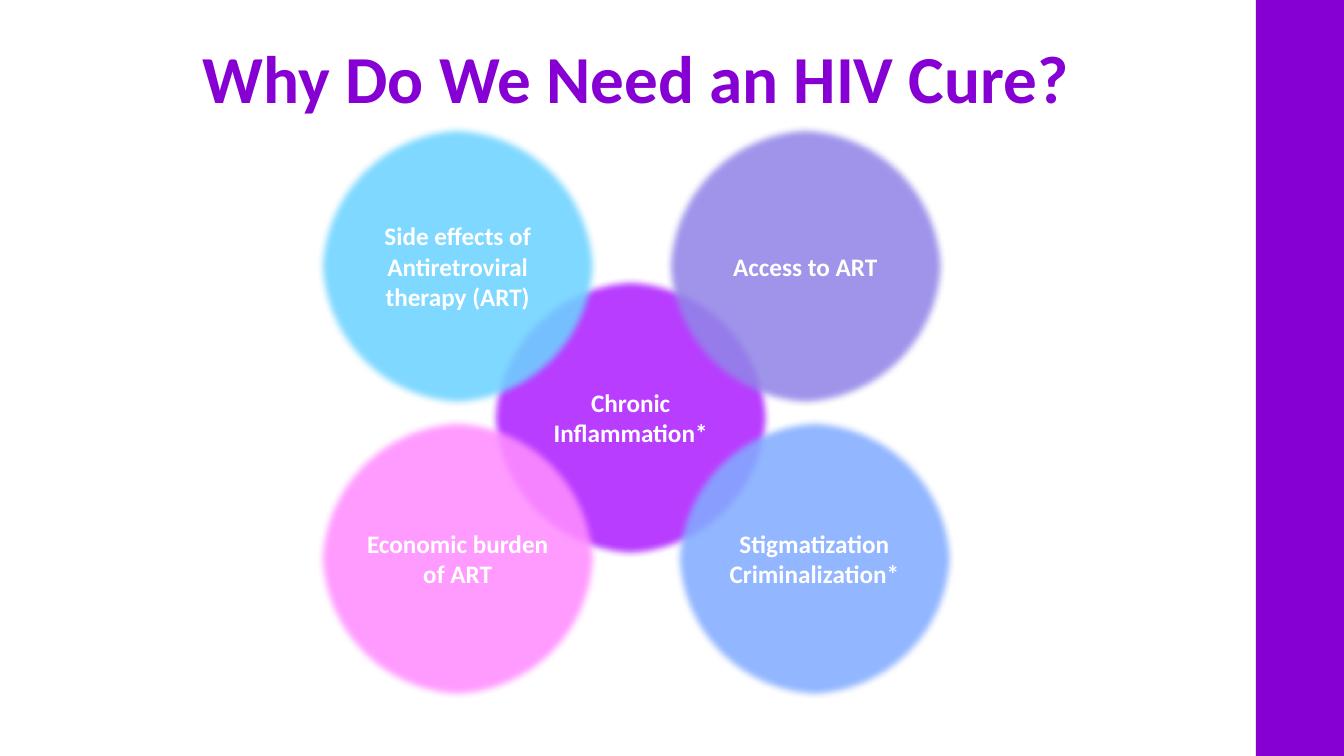
"""Build the slide on reasons for an HIV cure, with five overlapping soft circles."""
from lxml import etree
from pptx import Presentation
from pptx import util as u
from pptx.dml.color import RGBColor
from pptx.enum import shapes, text
from pptx.oxml import ns


def rgb(value):
    return RGBColor.from_string(value)


class Deck:
    font = "Calibri"
    accent = "8600D3"
    white = "FFFFFF"
    opacity = 87
    soft_edge = u.Pt(5)

    def __init__(self, width, height):
        self.prs = Presentation()
        self.prs.slide_width, self.prs.slide_height = u.Cm(width), u.Cm(height)
        self.s = self.prs.slides.add_slide(self.prs.slide_layouts[6])

    def put_text(self, tf, lines, size, color, anchor):
        tf.word_wrap = True
        tf.vertical_anchor = anchor
        for i, line in enumerate(lines):
            p = tf.add_paragraph() if i else tf.paragraphs[0]
            p.text = line
            p.alignment = text.PP_ALIGN.CENTER
            p.font.name, p.font.size, p.font.bold = self.font, u.Pt(size), True
            p.font.color.rgb = rgb(color)

    def shape(self, kind, box, color):
        sp = self.s.shapes.add_shape(kind, *map(u.Cm, box))
        sp.shadow.inherit = False
        sp.fill.solid()
        sp.fill.fore_color.rgb = rgb(color)
        sp.line.fill.background()
        return sp

    def bar(self, *box):
        self.shape(shapes.MSO_SHAPE.RECTANGLE, box, self.accent)

    def title(self, line, *box):
        tf = self.s.shapes.add_textbox(*map(u.Cm, box)).text_frame
        self.put_text(tf, [line], 48, self.accent, text.MSO_ANCHOR.TOP)
        tf.paragraphs[0].line_spacing = 0.9

    def circle(self, left, top, size, color, lines):
        sp = self.shape(shapes.MSO_SHAPE.OVAL, (left, top, size, size), color)
        fill = sp._element.spPr.find(".//" + ns.qn("a:srgbClr"))
        etree.SubElement(fill, ns.qn("a:alpha"), val=str(self.opacity * 1000))
        effects = sp._element.spPr.find(ns.qn("a:effectLst"))
        etree.SubElement(effects, ns.qn("a:softEdge"), rad=str(self.soft_edge))
        tf = sp.text_frame
        tf.margin_left = tf.margin_right = tf.margin_top = tf.margin_bottom = 0
        self.put_text(tf, lines, 18, self.white, text.MSO_ANCHOR.MIDDLE)


def main():
    deck = Deck(33.87, 19.05)
    deck.bar(31.65, 0, 2.22, 19.05)
    deck.title("Why Do We Need an HIV Cure?", 1.17, 1.02, 29.72, 3.68)

    left, upper, lower, diameter = 7.98, 3.15, 10.52, 7.11
    circles = [
        (12.34, 6.96, "AF22FF", ["Chronic Inflammation*"]),
        (16.97, lower, "82ACFF", ["Stigmatization", "Criminalization*"]),
        (left, upper, "6DD3FF", ["Side effects of Antiretroviral therapy (ART)"]),
        (16.74, upper, "9185E8", ["Access to ART"]),
        (left, lower, "FF8DFF", ["Economic burden of ART"]),
    ]
    for x, y, color, lines in circles:
        deck.circle(x, y, diameter, color, lines)
    deck.prs.save("out.pptx")


if __name__ == "__main__":
    main()
